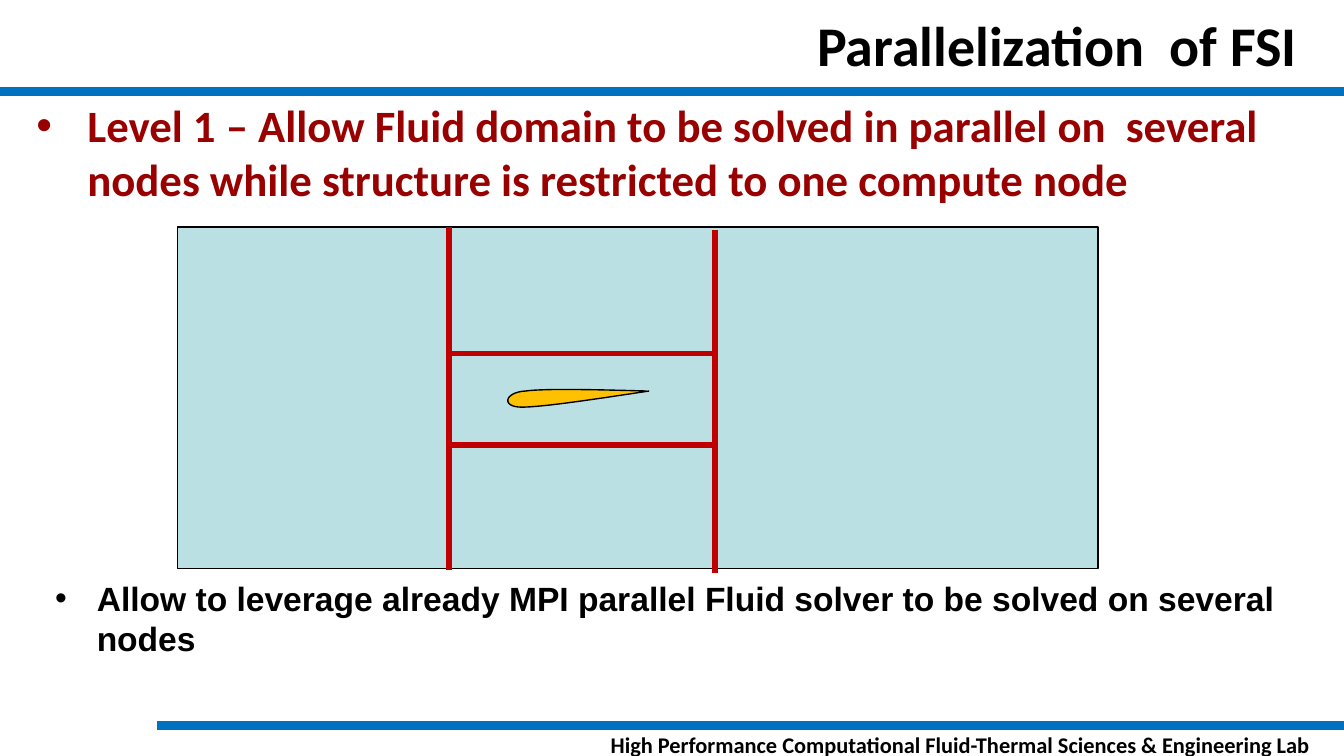
from dataclasses import dataclass

from lxml import etree
from pptx import Presentation
from pptx.dml.color import RGBColor
from pptx.enum.shapes import MSO_CONNECTOR, MSO_SHAPE
from pptx.enum.text import MSO_ANCHOR, MSO_AUTO_SIZE, PP_ALIGN
from pptx.oxml.ns import qn
from pptx.util import Inches, Pt

STRAIGHT = MSO_CONNECTOR.STRAIGHT
RECTANGLE = MSO_SHAPE.RECTANGLE
TOP, MIDDLE = MSO_ANCHOR.TOP, MSO_ANCHOR.MIDDLE
LEFT, RIGHT = PP_ALIGN.LEFT, PP_ALIGN.RIGHT
FIXED = MSO_AUTO_SIZE.NONE


@dataclass(frozen=True)
class Theme:
    ink: str = "000000"
    heading: str = "990000"
    rule: str = "0070C0"
    domain: str = "BBE0E3"
    partition: str = "C00000"
    airfoil: str = "FFC000"
    title_size: int = 30
    body_size: int = 24
    note_size: int = 18
    footer_size: int = 12


theme = Theme()


def write(box, text, at, size, color=theme.ink, font="Calibri", align=LEFT,
          anchor=TOP, margins=(0.1, 0.05), indent=0):
    box.left, box.top, box.width, box.height = [Inches(value) for value in at]
    frame = box.text_frame
    frame.word_wrap = True
    frame.auto_size = FIXED
    frame.vertical_anchor = anchor
    frame.margin_left = frame.margin_right = Inches(margins[0])
    frame.margin_top = frame.margin_bottom = Inches(margins[1])
    para = frame.paragraphs[0]
    para.alignment = align
    para.space_before = Pt(0)
    if indent:
        properties = para._p.get_or_add_pPr()
        properties.set("marL", str(Inches(indent)))
        properties.set("indent", str(-Inches(indent)))
        etree.SubElement(properties, qn("a:buFont")).set("typeface", "Arial")
        etree.SubElement(properties, qn("a:buChar")).set("char", "•")
    span = para.add_run()
    span.text = text
    span.font.name = font
    span.font.size = Pt(size)
    span.font.bold = True
    span.font.color.rgb = RGBColor.from_string(color)


def outline(shape, fill):
    shape.shadow.inherit = False
    shape.fill.solid()
    shape.fill.fore_color.rgb = RGBColor.from_string(fill)
    shape.line.color.rgb = RGBColor.from_string(theme.ink)
    shape.line.width = Pt(0.75)


deck = Presentation()
deck.slide_width = Inches(10)
deck.slide_height = Inches(10 * 9 / 16)
page = deck.slides.add_slide(deck.slide_layouts[1])
shapes = page.shapes

write(shapes.title, "Parallelization  of FSI", (0.17, 0.03, 9.58, 0.6),
      theme.title_size, align=RIGHT, anchor=MIDDLE)
write(page.placeholders[1],
      "Level 1 – Allow Fluid domain to be solved in parallel on  several nodes "
      "while structure is restricted to one compute node",
      (0.17, 0.68, 9.58, 1.14), theme.body_size, color=theme.heading, indent=0.38)
write(shapes.add_textbox(0, 0, 0, 0),
      "High Performance Computational Fluid-Thermal Sciences & Engineering Lab",
      (4.38, 5.44, 5.37, 0.2), theme.footer_size, align=RIGHT, margins=(0, 0))

domain = shapes.add_shape(RECTANGLE, Inches(1.32), Inches(1.69), Inches(6.85), Inches(2.54))
outline(domain, theme.domain)

tail = (4.83, 2.91)
airfoil_curves = [
    ((4.43, 2.97), (4.04, 3.03), (3.88, 3.03)),
    ((3.73, 3.03), (3.75, 2.92), (3.91, 2.91)),
    ((4.06, 2.89), (4.44, 2.9), (4.81, 2.91)),
]
steps = 16
points = []
start = tail
for first, second, end in airfoil_curves:
    for step in range(1, steps + 1):
        t = step / steps
        weights = ((1 - t) ** 3, 3 * t * (1 - t) ** 2, 3 * t ** 2 * (1 - t), t ** 3)
        corners = (start, first, second, end)
        points.append(tuple(
            Inches(sum(weight * corner[axis] for weight, corner in zip(weights, corners)))
            for axis in (0, 1)))
    start = end
builder = shapes.build_freeform(Inches(tail[0]), Inches(tail[1]))
builder.add_line_segments(points, close=False)
outline(builder.convert_to_shape(), theme.airfoil)

left_cut, right_cut = 3.34, 5.32
lines = [
    ((0, 0.68), (10, 0.68), theme.rule, 5),
    ((10, 5.4), (1.17, 5.4), theme.rule, 5),
    ((left_cut, 1.69), (left_cut, 4.24), theme.partition, 3),
    ((right_cut, 1.71), (right_cut, 4.26), theme.partition, 3),
    ((left_cut, 2.63), (right_cut, 2.63), theme.partition, 3),
    ((left_cut, 3.31), (right_cut, 3.31), theme.partition, 3),
]
for begin, end, color, width in lines:
    line = shapes.add_connector(STRAIGHT, *[Inches(value) for value in begin + end])
    line.line.color.rgb = RGBColor.from_string(color)
    line.line.width = Pt(width)
    etree.SubElement(line._element.spPr, qn("a:effectLst"))

write(shapes.add_textbox(0, 0, 0, 0),
      "Allow to leverage already MPI parallel Fluid solver to be solved on several nodes",
      (0.34, 4.26, 9.72, 0.98), theme.note_size, font="Arial",
      margins=(0.07, 0.04), indent=0.31)

deck.save("out.pptx")
